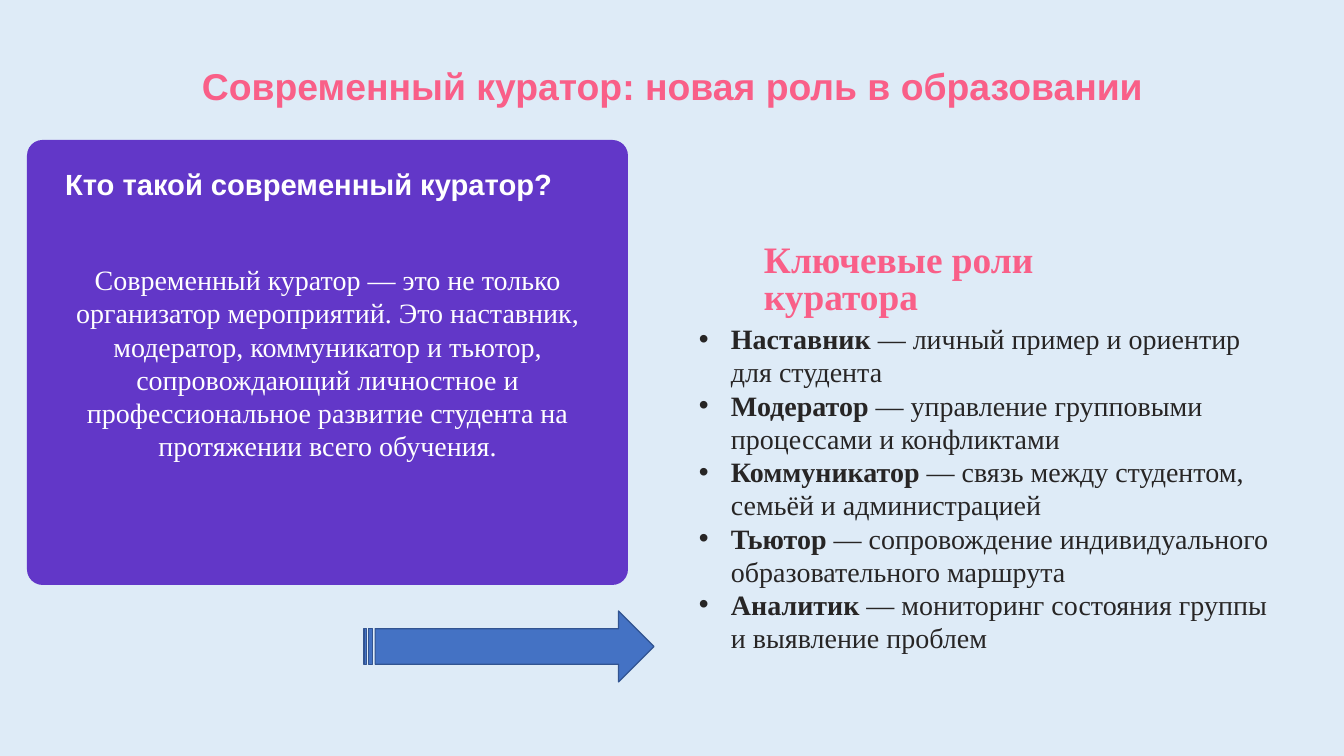
from dataclasses import dataclass

import lxml.etree
import pptx
import pptx.dml.color
import pptx.enum.shapes
import pptx.enum.text
import pptx.oxml.ns
import pptx.slide
import pptx.text.text
import pptx.util

EMU_PER_PX = 914400 / 84

SKY = pptx.dml.color.RGBColor(0xDE, 0xEB, 0xF7)
PINK = pptx.dml.color.RGBColor(0xF9, 0x5F, 0x88)
VIOLET = pptx.dml.color.RGBColor(0x62, 0x37, 0xC8)
WHITE = pptx.dml.color.RGBColor(0xFF, 0xFF, 0xFF)
INK = pptx.dml.color.RGBColor(0x27, 0x25, 0x25)
BLUE = pptx.dml.color.RGBColor(0x44, 0x72, 0xC4)
NAVY = pptx.dml.color.RGBColor(0x32, 0x54, 0x91)

SANS = "Arial"
SERIF = "Times New Roman"
LEFT = pptx.enum.text.PP_ALIGN.LEFT
CENTER = pptx.enum.text.PP_ALIGN.CENTER
BULLET_INDENT = 32


@dataclass(frozen=True)
class Box:
    left: int
    top: int
    width: int
    height: int


@dataclass(frozen=True)
class Style:
    font: str
    size: int
    color: pptx.dml.color.RGBColor
    line_spacing: float
    align: pptx.enum.text.PP_ALIGN = LEFT
    bold: bool = False
    bullet: bool = False


@dataclass(frozen=True)
class TextBlock:
    box: Box
    style: Style
    # Each paragraph is a bold lead and the text that follows it
    paragraphs: tuple[tuple[str, str], ...]
    wrap: bool = True


@dataclass(frozen=True)
class Panel:
    box: Box
    kind: pptx.enum.shapes.MSO_SHAPE
    fill: pptx.dml.color.RGBColor
    line: pptx.dml.color.RGBColor | None = None
    corner: float | None = None


CARD = Panel(Box(27, 140, 601, 445), pptx.enum.shapes.MSO_SHAPE.ROUNDED_RECTANGLE,
             VIOLET, corner=0.035)
ARROW = Panel(Box(364, 611, 290, 71), pptx.enum.shapes.MSO_SHAPE.STRIPED_RIGHT_ARROW,
              BLUE, line=NAVY)

TITLE = TextBlock(
    Box(76, 34, 1194, 74), Style(SANS, 32, PINK, 63, CENTER, bold=True),
    (("", "Современный куратор: новая роль в образовании"),))
QUESTION = TextBlock(
    Box(50, 165, 517, 37), Style(SANS, 25, WHITE, 31.5, CENTER, bold=True),
    (("", "Кто такой современный куратор?"),), wrap=False)
ANSWER = TextBlock(
    Box(48, 263, 559, 166), Style(SERIF, 24, WHITE, 28.5, CENTER),
    (("", "Современный куратор — это не только организатор мероприятий. "
          "Это наставник, модератор, коммуникатор и тьютор, сопровождающий "
          "личностное и профессиональное развитие студента на протяжении "
          "всего обучения."),))
ROLES_HEADING = TextBlock(
    Box(764, 244, 394, 37), Style(SERIF, 32, PINK, 31.5, bold=True),
    (("", "Ключевые роли куратора"),), wrap=False)
ROLES = TextBlock(
    Box(699, 322, 571, 360), Style(SERIF, 24, INK, 28.5, bullet=True),
    (("Наставник", " — личный пример и ориентир для студента"),
     ("Модератор", " — управление групповыми процессами и конфликтами"),
     ("Коммуникатор", " — связь между студентом, семьёй и администрацией"),
     ("Тьютор", " — сопровождение индивидуального образовательного маршрута"),
     ("Аналитик", " — мониторинг состояния группы и выявление проблем")))


def px(length: int) -> pptx.util.Emu:
    return pptx.util.Emu(round(length * EMU_PER_PX))


def place(box: Box) -> tuple[pptx.util.Emu, ...]:
    return px(box.left), px(box.top), px(box.width), px(box.height)


def add_bullet(paragraph: pptx.text.text._Paragraph) -> None:
    properties = paragraph._p.get_or_add_pPr()
    properties.set("marL", str(px(BULLET_INDENT)))
    properties.set("indent", str(-px(BULLET_INDENT)))
    for tag, name, value in (("a:buFont", "typeface", SANS), ("a:buChar", "char", "•")):
        lxml.etree.SubElement(properties, pptx.oxml.ns.qn(tag)).set(name, value)


def add_run(paragraph: pptx.text.text._Paragraph, text: str, style: Style, bold: bool) -> None:
    run = paragraph.add_run()
    run.text = text
    font_format = {"name": style.font, "size": pptx.util.Pt(style.size), "bold": bold}
    for attribute, value in font_format.items():
        setattr(run.font, attribute, value)
    run.font.color.rgb = style.color


def draw_text(slide: pptx.slide.Slide, block: TextBlock) -> None:
    frame = slide.shapes.add_textbox(*place(block.box)).text_frame
    frame_format = {"margin_left": 0, "margin_top": 0, "margin_right": 0,
                    "margin_bottom": 0, "word_wrap": block.wrap}
    for attribute, value in frame_format.items():
        setattr(frame, attribute, value)
    style = block.style
    for index, (lead, body) in enumerate(block.paragraphs):
        paragraph = frame.add_paragraph() if index else frame.paragraphs[0]
        paragraph.alignment = style.align
        paragraph.line_spacing = pptx.util.Pt(style.line_spacing)
        if style.bullet:
            add_bullet(paragraph)
        if lead:
            add_run(paragraph, lead, style, bold=True)
        add_run(paragraph, body, style, style.bold)


def draw_panel(slide: pptx.slide.Slide, panel: Panel) -> None:
    shape = slide.shapes.add_shape(panel.kind, *place(panel.box))
    shape.shadow.inherit = False
    shape.fill.solid()
    shape.fill.fore_color.rgb = panel.fill
    if panel.line is None:
        shape.line.fill.background()
    else:
        shape.line.color.rgb = panel.line
        shape.line.width = pptx.util.Pt(1)
    if panel.corner is not None:
        shape.adjustments[0] = panel.corner


def main() -> None:
    presentation = pptx.Presentation()
    presentation.slide_width = px(1344)
    presentation.slide_height = px(756)
    slide = presentation.slides.add_slide(presentation.slide_layouts[6])
    slide.background.fill.solid()
    slide.background.fill.fore_color.rgb = SKY

    # Title and the card that defines the curator
    draw_text(slide, TITLE)
    draw_panel(slide, CARD)
    draw_text(slide, QUESTION)
    draw_text(slide, ANSWER)

    # Key roles and the arrow leading to them
    draw_text(slide, ROLES_HEADING)
    draw_text(slide, ROLES)
    draw_panel(slide, ARROW)

    presentation.save("out.pptx")


if __name__ == "__main__":
    main()
